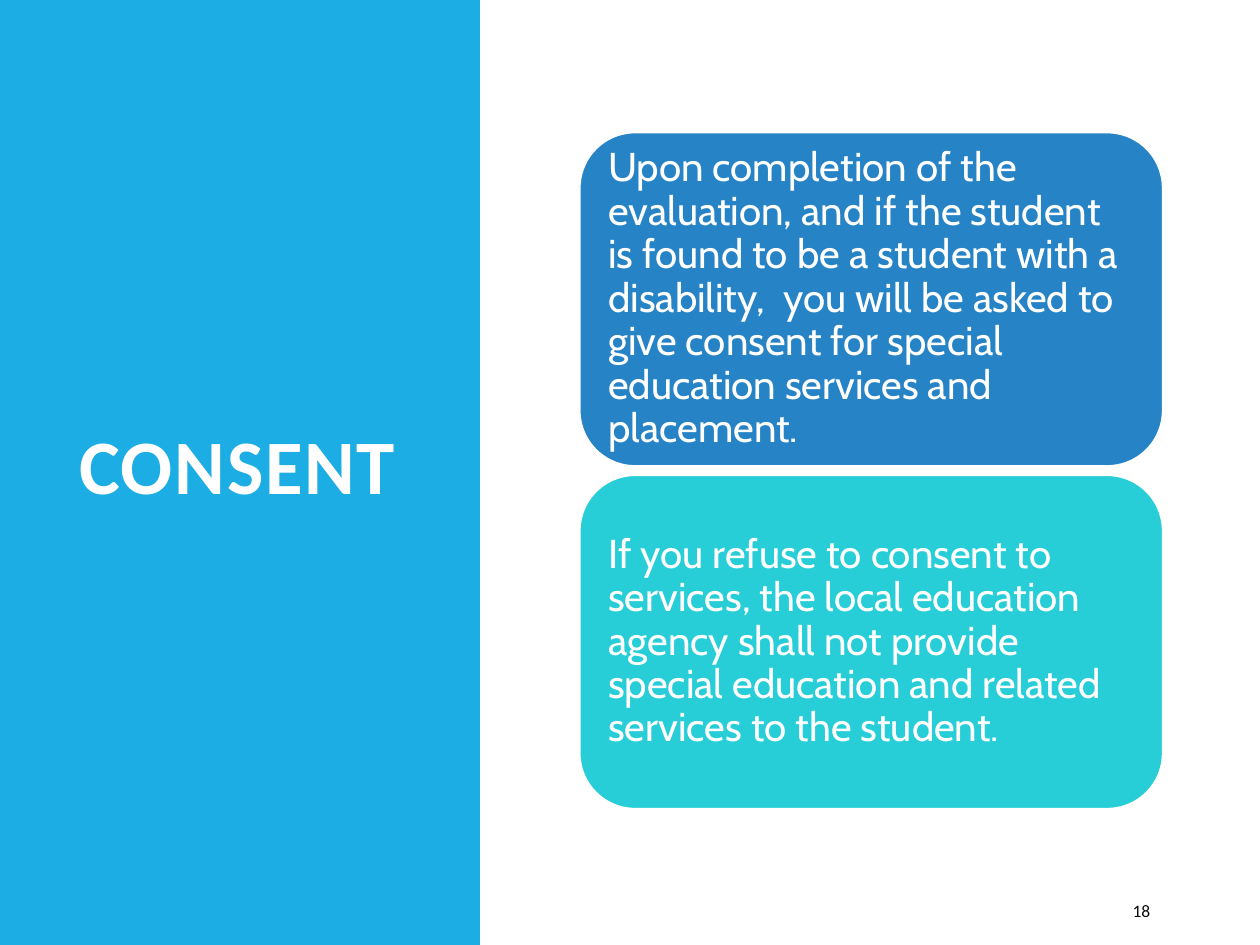
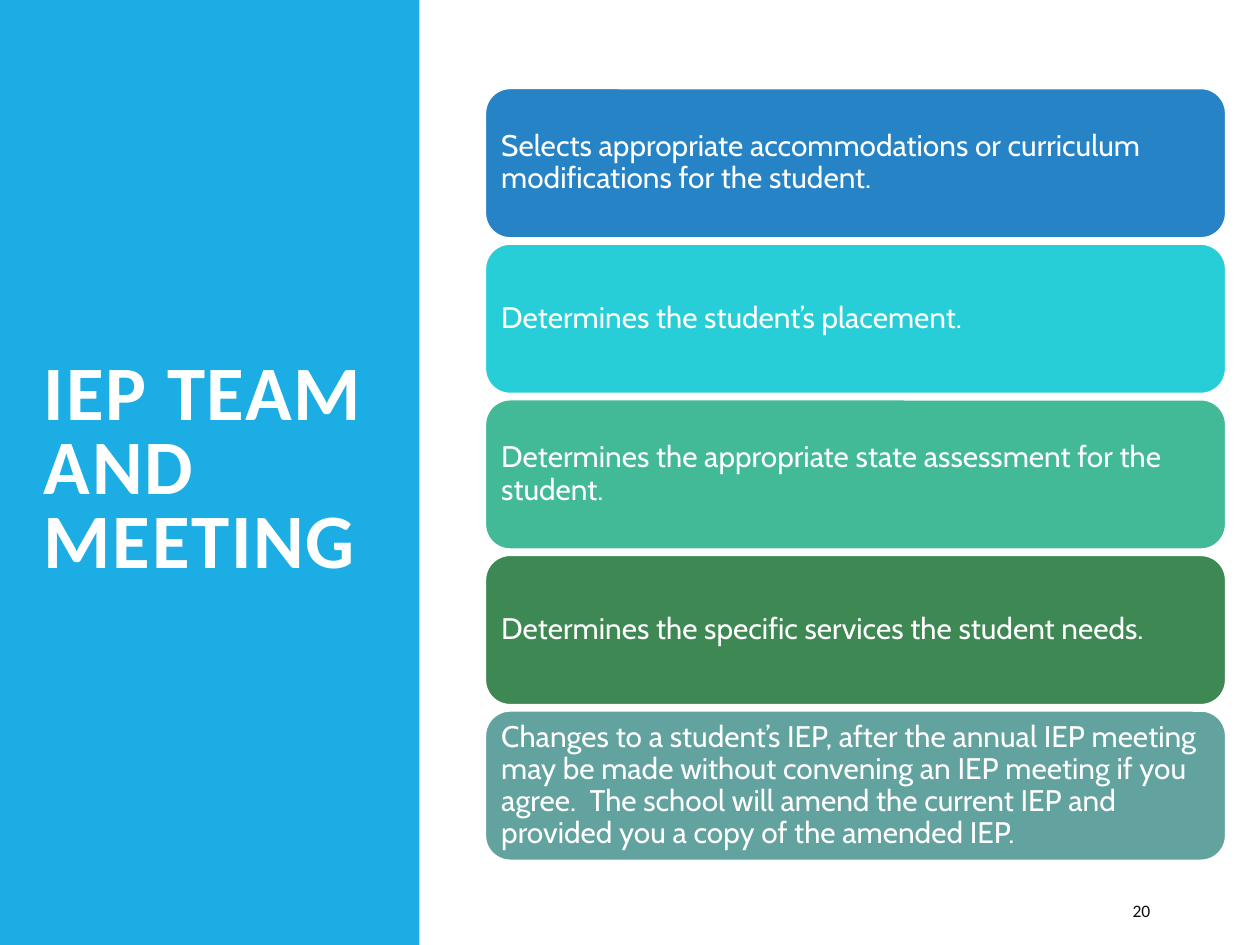
from pptx import Presentation
from pptx.dml.color import RGBColor
from pptx.enum.shapes import MSO_SHAPE as Shape
from pptx.enum.text import MSO_ANCHOR as Anchor, PP_ALIGN as Align
from pptx.util import Inches, Pt

WHITE = RGBColor(0xFF, 0xFF, 0xFF)
NEAR_BLACK = RGBColor(0x0D, 0x0D, 0x0D)
BAND_BLUE = RGBColor(0x1C, 0xAD, 0xE4)
CARD_COLORS = [
    RGBColor(0x26, 0x83, 0xC6),
    RGBColor(0x27, 0xCE, 0xD7),
    RGBColor(0x42, 0xBA, 0x97),
    RGBColor(0x3E, 0x88, 0x53),
    RGBColor(0x62, 0xA3, 0x9F),
]
HEADING_FONT = "Calibri"
CARD_FONT = "Cabin"
SLIDE_WIDTH, SLIDE_HEIGHT = 10, 7.5

CONSENT_CARDS = [
    "Upon completion of the evaluation, and if the student is found to be a student "
    "with a disability,  you will be asked to give consent for special education "
    "services and placement.",
    "If you refuse to consent to services, the local education agency shall not "
    "provide special education and related services to the student.",
]
IEP_CARDS = [
    "Selects appropriate accommodations or curriculum modifications for the student.",
    "Determines the student’s placement.",
    "Determines the appropriate state assessment for the student.",
    "Determines the specific services the student needs.",
    "Changes to a student’s IEP, after the annual IEP meeting may be made without "
    "convening an IEP meeting if you agree.  The school will amend the current IEP "
    "and provided you a copy of the amended IEP.",
]


def write_text(shape, text, font_name, size, color, line_spacing=1.0):
    """Put one left-aligned, vertically centred paragraph in a shape; return its run."""
    frame = shape.text_frame
    frame.text = text
    frame.word_wrap = True
    frame.vertical_anchor = Anchor.MIDDLE
    paragraph = frame.paragraphs[0]
    paragraph.alignment = Align.LEFT
    paragraph.line_spacing = line_spacing
    run = paragraph.runs[0]
    run.font.name = font_name
    run.font.size = Pt(size)
    run.font.color.rgb = color
    return run


def add_filled_shape(slide, kind, left, top, width, height, color):
    shape = slide.shapes.add_shape(
        kind, Inches(left), Inches(top), Inches(width), Inches(height))
    shape.shadow.inherit = False
    shape.fill.solid()
    shape.fill.fore_color.rgb = color
    shape.line.fill.background()
    return shape


def add_text_box(slide, left, top, width, height):
    return slide.shapes.add_textbox(
        Inches(left), Inches(top), Inches(width), Inches(height))


def add_title(slide, text, left, width):
    box = add_text_box(slide, left, 0.7, width, 6.1)
    run = write_text(box, text, HEADING_FONT, 44, WHITE, line_spacing=0.8)
    run.font.bold = True
    run._r.get_or_add_rPr().set("spc", "100")


def add_page_number(slide, number):
    box = add_text_box(slide, 8.89, 7.08, 0.8, 0.3)
    write_text(box, str(number), HEADING_FONT, 10, NEAR_BLACK)


def add_cards(slide, texts, left, top, bottom, width, height, size, inset):
    """Stack rounded cards at an equal pitch between top and bottom."""
    pitch = (bottom - top - height) / (len(texts) - 1)
    for index, (text, color) in enumerate(zip(texts, CARD_COLORS)):
        card = add_filled_shape(slide, Shape.ROUNDED_RECTANGLE,
                                left, top + index * pitch, width, height, color)
        card.line.color.rgb = WHITE
        card.line.width = Pt(1.25)
        frame = card.text_frame
        frame.margin_left = frame.margin_right = Inches(inset)
        frame.margin_top = frame.margin_bottom = Inches(inset)
        write_text(card, text, CARD_FONT, size, WHITE, line_spacing=0.9)


def add_band_slide(presentation, title, band_width, title_left, page_number):
    slide = presentation.slides.add_slide(presentation.slide_layouts[6])
    add_filled_shape(slide, Shape.RECTANGLE, 0, 0, band_width, SLIDE_HEIGHT, BAND_BLUE)
    add_title(slide, title, title_left, 2.8)
    add_page_number(slide, page_number)
    return slide


def main():
    presentation = Presentation()
    presentation.slide_width = Inches(SLIDE_WIDTH)
    presentation.slide_height = Inches(SLIDE_HEIGHT)

    consent = add_band_slide(presentation, "CONSENT", 3.81, 0.53, 18)
    add_cards(consent, CONSENT_CARDS, left=4.6, top=1.05, bottom=6.42,
              width=4.63, height=2.65, size=23, inset=0.1)

    iep_team = add_band_slide(presentation, "IEP TEAM AND MEETING", 3.33, 0.25, 20)
    add_cards(iep_team, IEP_CARDS, left=3.85, top=0.7, bottom=6.83,
              width=5.88, height=1.19, size=17, inset=0.07)

    presentation.save("out.pptx")


if __name__ == "__main__":
    main()
